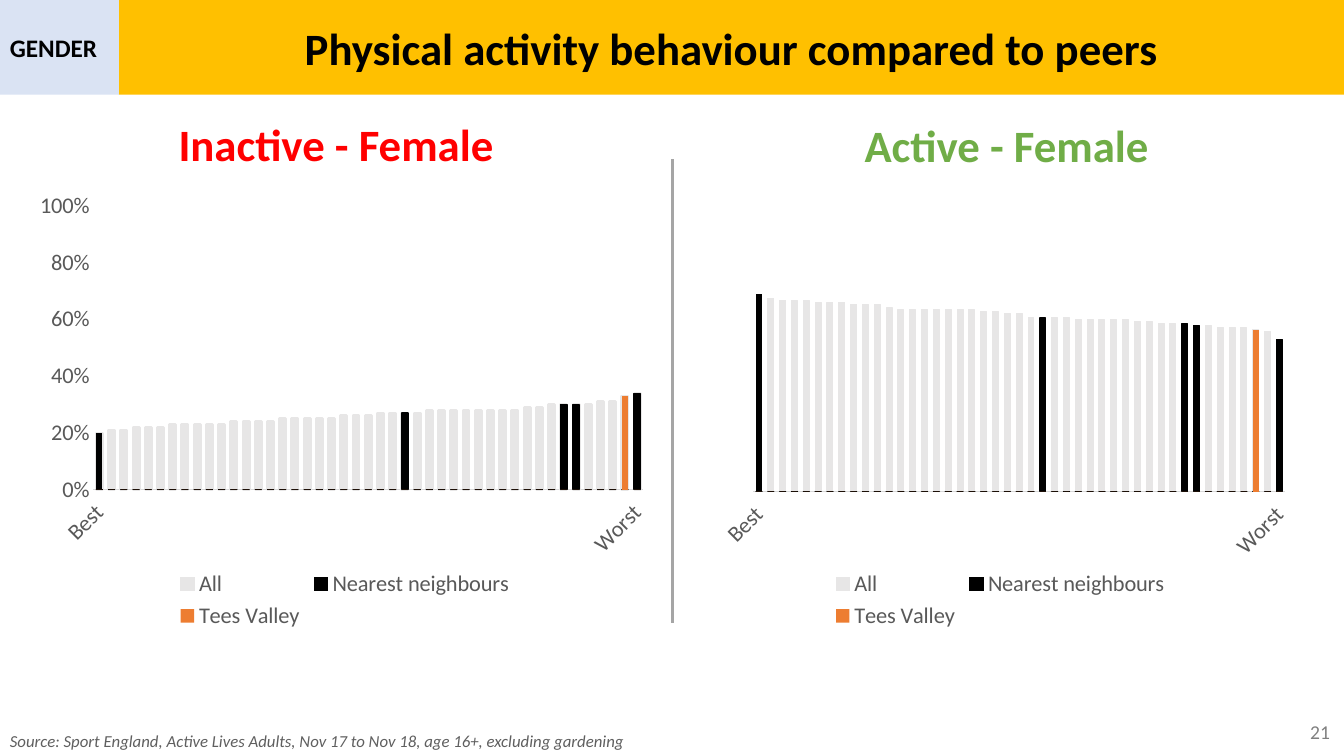
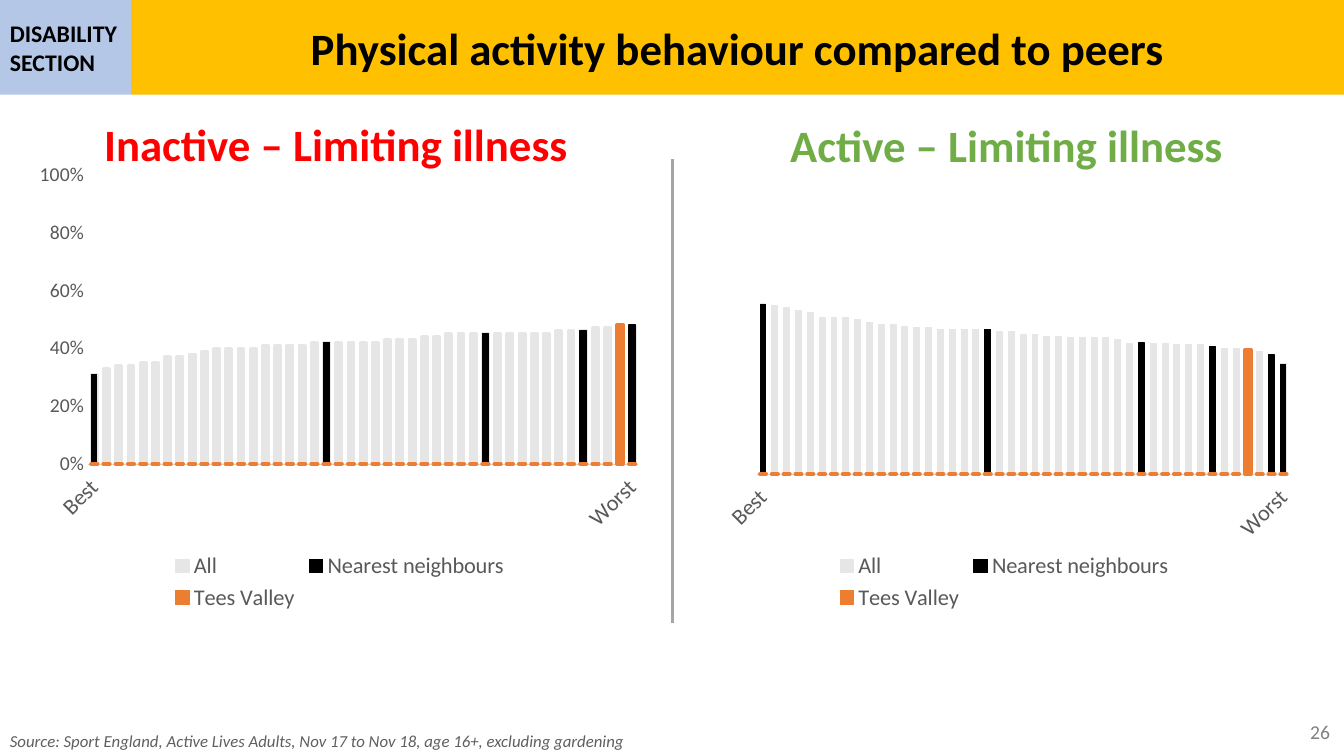
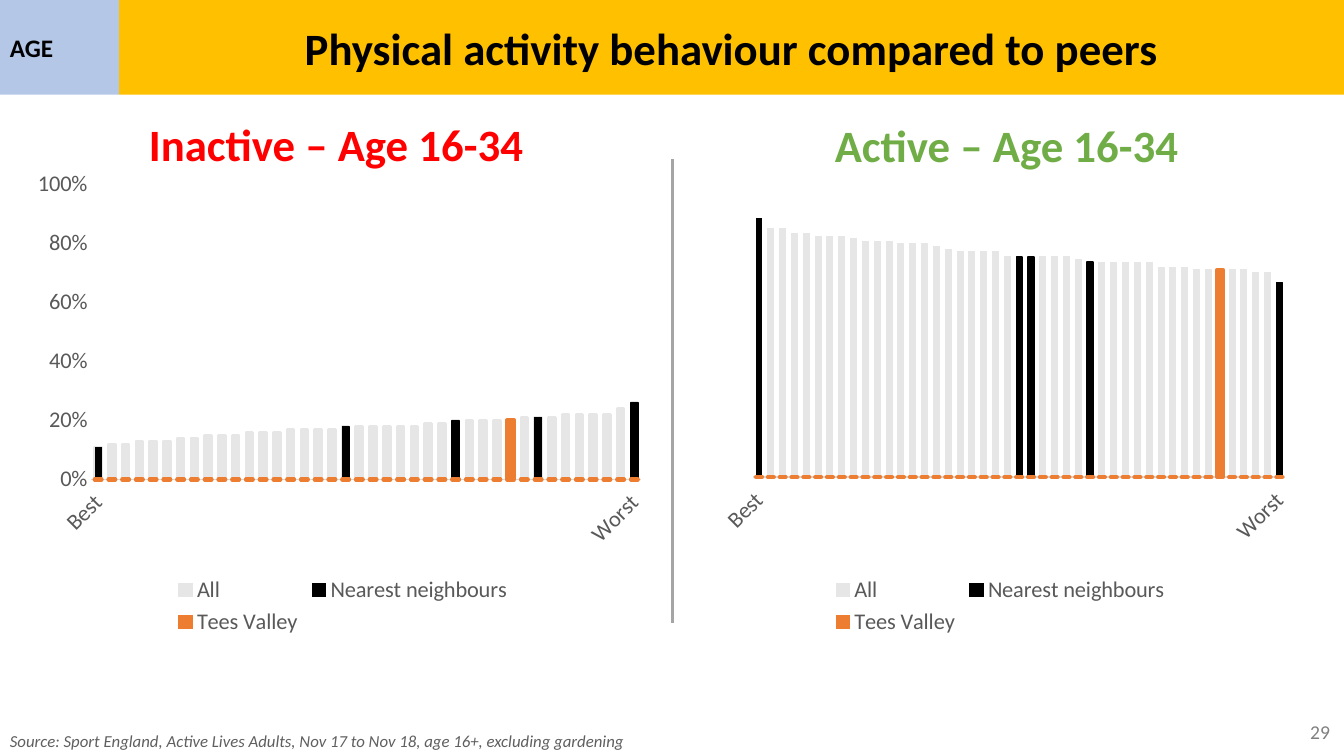
from dataclasses import dataclass

from lxml import etree
from pptx import Presentation
from pptx.chart.data import CategoryChartData
from pptx.dml.color import RGBColor
from pptx.enum.chart import XL_CHART_TYPE, XL_LEGEND_POSITION, XL_TICK_LABEL_POSITION, XL_TICK_MARK
from pptx.enum.shapes import MSO_CONNECTOR, MSO_SHAPE
from pptx.enum.text import MSO_ANCHOR, PP_ALIGN
from pptx.oxml.ns import qn
from pptx.util import Inches, Pt

COLUMN = XL_CHART_TYPE.COLUMN_CLUSTERED
BOTTOM = XL_LEGEND_POSITION.BOTTOM
LABELS_LOW = XL_TICK_LABEL_POSITION.LOW
NO_TICK = XL_TICK_MARK.NONE
STRAIGHT = MSO_CONNECTOR.STRAIGHT
RECTANGLE = MSO_SHAPE.RECTANGLE
MIDDLE = MSO_ANCHOR.MIDDLE
LEFT, CENTER, RIGHT = PP_ALIGN.LEFT, PP_ALIGN.CENTER, PP_ALIGN.RIGHT

FONT = "Calibri"
TITLE = "Physical activity behaviour compared to peers"
SOURCE = "Source: Sport England, Active Lives Adults, Nov 17 to Nov 18, age 16+, excluding gardening"
SLIDE_WIDTH = 13.33
BAND_HEIGHT = 0.94
CHART_WIDTH = 6.3
TITLE_ONLY = 5
COLORS = {
    "band": "FFC000",
    "pale_tab": "DAE3F3",
    "tab": "B4C7E7",
    "text": "000000",
    "inactive": "FF0000",
    "active": "70AD47",
    "divider": "A5A5A5",
    "source": "5F5F5F",
    "number": "808080",
    "axis_text": "595959",
    "axis_line": "D9D9D9",
    "all": "E7E6E6",
    "neighbours": "000000",
    "region": "ED7D31",
}


@dataclass
class PeerChart:
    left: float
    plot_top: float
    plot_height: float
    lowest: int
    bars_per_point: list
    neighbours: tuple
    region: int
    maximum: int = 100
    axis_size: int = 16
    is_active: bool = False

    def values(self):
        scale = 1 if self.is_active else 100
        return [point / scale
                for point, count in enumerate(self.bars_per_point, self.lowest)
                for _ in range(count)]


@dataclass
class PeerSlide:
    section: str
    group: str
    number: int
    chart_top: float
    chart_height: float
    inactive: PeerChart
    active: PeerChart
    tab_width: float = 1.18
    tab_size: int = 18
    tab_color: str = "tab"
    region_outline: int = 3


SLIDES = [
    PeerSlide(
        "GENDER", "- Female", 21, 1.66, 4.63, tab_color="pale_tab", region_outline=0,
        inactive=PeerChart(
            0.27, 0.083, 0.608, 20,
            [1, 2, 3, 5, 4, 5, 3, 4, 8, 2, 4, 2, 0, 1, 1],
            (25, 38, 39, 44), 43),
        active=PeerChart(
            6.77, 0.069, 0.626, 77,
            [1, 0, 0, 0, 1, 1, 3, 2, 3, 2, 5, 4, 0, 2, 2, 7, 1, 0, 3, 3, 3, 1, 0, 1],
            (0, 7, 8, 20), 2, maximum=148, is_active=True)),
    PeerSlide(
        "DISABILITY SECTION", "– Limiting illness", 26, 1.39, 4.72, tab_width=1.3, tab_size=17,
        inactive=PeerChart(
            0.22, 0.072, 0.609, 31,
            [1, 0, 1, 2, 2, 0, 2, 1, 1, 4, 4, 6, 3, 2, 9, 3, 2, 2],
            (19, 32, 40, 44), 43, axis_size=14),
        active=PeerChart(
            6.81, 0.037, 0.665, 65,
            [1] + [0] * 4 + [1, 0, 1, 1, 2, 1, 3, 4, 0, 1, 4, 2, 2, 0, 2, 5, 2, 1, 2, 1, 0, 1, 3]
            + [0, 0, 1, 1, 0, 1, 1, 1],
            (1, 6, 12, 25), 3, maximum=186, is_active=True)),
    PeerSlide(
        "AGE", "– Age 16-34", 29, 1.51, 4.84,
        inactive=PeerChart(
            0.25, 0.065, 0.606, 11,
            [1, 2, 3, 2, 3, 3, 4, 6, 2, 5, 3, 4, 0, 1, 0, 1],
            (18, 26, 32, 39), 30),
        active=PeerChart(
            6.77, 0.029, 0.637, 75,
            [1, 0, 0, 0, 2, 5, 3, 0, 6, 1, 6, 0, 4, 1, 1, 3, 3, 1, 3, 2, 0, 2] + [0] * 3 + [1],
            (0, 16, 21, 22), 5, maximum=120, is_active=True)),
]


def rgb(name):
    return RGBColor.from_string(COLORS[name])


def style_font(font, size, color, bold=False, italic=False):
    font.name = FONT
    font.size = Pt(size)
    font.bold = bold
    font.italic = italic
    font.color.rgb = rgb(color)


def set_text(shape, text, size, color, align=LEFT, bold=False, italic=False):
    shape.text_frame.text = text
    shape.text_frame.word_wrap = True
    paragraph = shape.text_frame.paragraphs[0]
    paragraph.alignment = align
    style_font(paragraph.runs[0].font, size, color, bold, italic)


def add_text(slide, box, text, size, color, **style):
    shape = slide.shapes.add_textbox(*map(Inches, box))
    set_text(shape, text, size, color, **style)


def fill_shape(shape, color):
    shape.fill.solid()
    shape.fill.fore_color.rgb = rgb(color)
    shape.line.fill.background()


def add_header(slide, content):
    title = slide.shapes.title
    title.left, title.top = Inches(content.tab_width), 0
    title.width = Inches(SLIDE_WIDTH - content.tab_width)
    title.height = Inches(BAND_HEIGHT)
    fill_shape(title, "band")
    set_text(title, TITLE, 32, "text", align=CENTER, bold=True)
    title.text_frame.vertical_anchor = MIDDLE

    tab = slide.shapes.add_shape(RECTANGLE, 0, 0, Inches(content.tab_width), Inches(BAND_HEIGHT))
    tab.shadow.inherit = False
    fill_shape(tab, content.tab_color)
    set_text(tab, content.section, content.tab_size, "text", bold=True)
    tab.text_frame.vertical_anchor = MIDDLE


def add_divider(slide):
    divider = slide.shapes.add_connector(STRAIGHT, *map(Inches, (6.67, 1.58, 6.67, 6.18)))
    divider.line.color.rgb = rgb("divider")
    divider.line.width = Pt(2)
    etree.SubElement(divider._element.spPr, qn("a:effectLst"))


def add_footer(slide, number):
    add_text(slide, (0, 7.2, 9.97, 0.3), SOURCE, 12, "source", italic=True)
    add_text(slide, (10.29, 7.09, 3, 0.4), str(number), 14, "number", align=RIGHT)


def pick(values, positions, other):
    return [value if index in positions else other for index, value in enumerate(values)]


def build_chart_data(content):
    values = content.values()
    ends = ("Worst", "Best") if content.is_active else ("Best", "Worst")
    data = CategoryChartData()
    data.categories = [ends[0]] + [""] * (len(values) - 2) + [ends[1]]
    data.add_series("All", values)
    data.add_series("Series 2", pick(values, (0, len(values) - 1), None))
    data.add_series("Nearest neighbours", pick(values, content.neighbours, 0))
    data.add_series("Tees Valley", pick(values, (content.region,), 0))
    return data


def style_series(plot, is_active, region_outline):
    plot.gap_width = 100
    plot.overlap = 100
    plot.vary_by_categories = False
    colors = ("all", "neighbours", "neighbours", "region")
    widths = (0.75 if is_active else 2, 0, 1, region_outline)
    for series, color, width in zip(plot.series, colors, widths):
        series.invert_if_negative = False
        series.format.fill.solid()
        series.format.fill.fore_color.rgb = rgb(color)
        if width:
            series.format.line.color.rgb = rgb(color)
            series.format.line.width = Pt(width)
        else:
            series.format.line.fill.background()


def style_axes(chart, content):
    category_axis = chart.category_axis
    category_axis.tick_label_position = LABELS_LOW
    category_axis.major_tick_mark = NO_TICK
    category_axis.reverse_order = content.is_active
    category_axis.format.line.color.rgb = rgb("axis_line")
    category_axis.format.line.width = Pt(0.75)
    style_font(category_axis.tick_labels.font, 16, "axis_text")
    category_axis._element.find(qn("c:txPr")).find(qn("a:bodyPr")).set("rot", "-2700000")

    value_axis = chart.value_axis
    maximum = content.maximum if content.is_active else content.maximum / 100
    value_axis.has_major_gridlines = False
    value_axis.minimum_scale = 0
    value_axis.maximum_scale = maximum
    value_axis.major_unit = maximum / 5
    value_axis.major_tick_mark = NO_TICK
    value_axis.format.line.fill.background()
    value_axis.tick_labels.number_format = "0%"
    value_axis.tick_labels.number_format_is_linked = False
    style_font(value_axis.tick_labels.font, content.axis_size, "axis_text")
    value_axis.visible = not content.is_active


def add_legend(chart):
    chart.has_legend = True
    legend = chart.legend
    legend.position = BOTTOM
    legend.include_in_layout = False
    style_font(legend.font, 16, "axis_text")
    entry = etree.Element(qn("c:legendEntry"))
    etree.SubElement(entry, qn("c:idx")).set("val", "1")
    etree.SubElement(entry, qn("c:delete")).set("val", "1")
    legend._element.find(qn("c:legendPos")).addnext(entry)


def place_plot(chart, content):
    plot_area = chart._chartSpace.chart.plotArea
    for old_layout in plot_area.findall(qn("c:layout")):
        plot_area.remove(old_layout)
    left, width = (0.111, 0.838) if content.is_active else (0.104, 0.866)
    layout = etree.Element(qn("c:layout"))
    manual = etree.SubElement(layout, qn("c:manualLayout"))
    settings = [("layoutTarget", "inner"), ("xMode", "edge"), ("yMode", "edge")]
    settings += zip("xywh", (left, content.plot_top, width, content.plot_height))
    for name, value in settings:
        etree.SubElement(manual, qn(f"c:{name}")).set("val", str(value))
    plot_area.insert(0, layout)


def add_peer_chart(slide, content, top, height, region_outline):
    box = map(Inches, (content.left, top, CHART_WIDTH, height))
    chart = slide.shapes.add_chart(COLUMN, *box, build_chart_data(content)).chart
    chart.has_title = False
    style_font(chart.font, content.axis_size, "text")
    style_series(chart.plots[0], content.is_active, region_outline)
    style_axes(chart, content)
    add_legend(chart)
    place_plot(chart, content)


def add_peer_slide(presentation, content):
    slide = presentation.slides.add_slide(presentation.slide_layouts[TITLE_ONLY])
    add_header(slide, content)
    headings = (("Inactive", "inactive", 0, 1.11), ("Active", "active", 6.65, 1.12))
    for word, color, left, top in headings:
        add_text(slide, (left, top, 6.67, 0.64), f"{word} {content.group}", 32, color,
                 align=CENTER, bold=True)
    add_divider(slide)
    add_footer(slide, content.number)
    for chart in (content.inactive, content.active):
        add_peer_chart(slide, chart, content.chart_top, content.chart_height,
                       content.region_outline)


def main():
    presentation = Presentation()
    presentation.slide_width = Inches(SLIDE_WIDTH)
    presentation.slide_height = Inches(7.5)
    for content in SLIDES:
        add_peer_slide(presentation, content)
    presentation.save("out.pptx")


if __name__ == "__main__":
    main()
